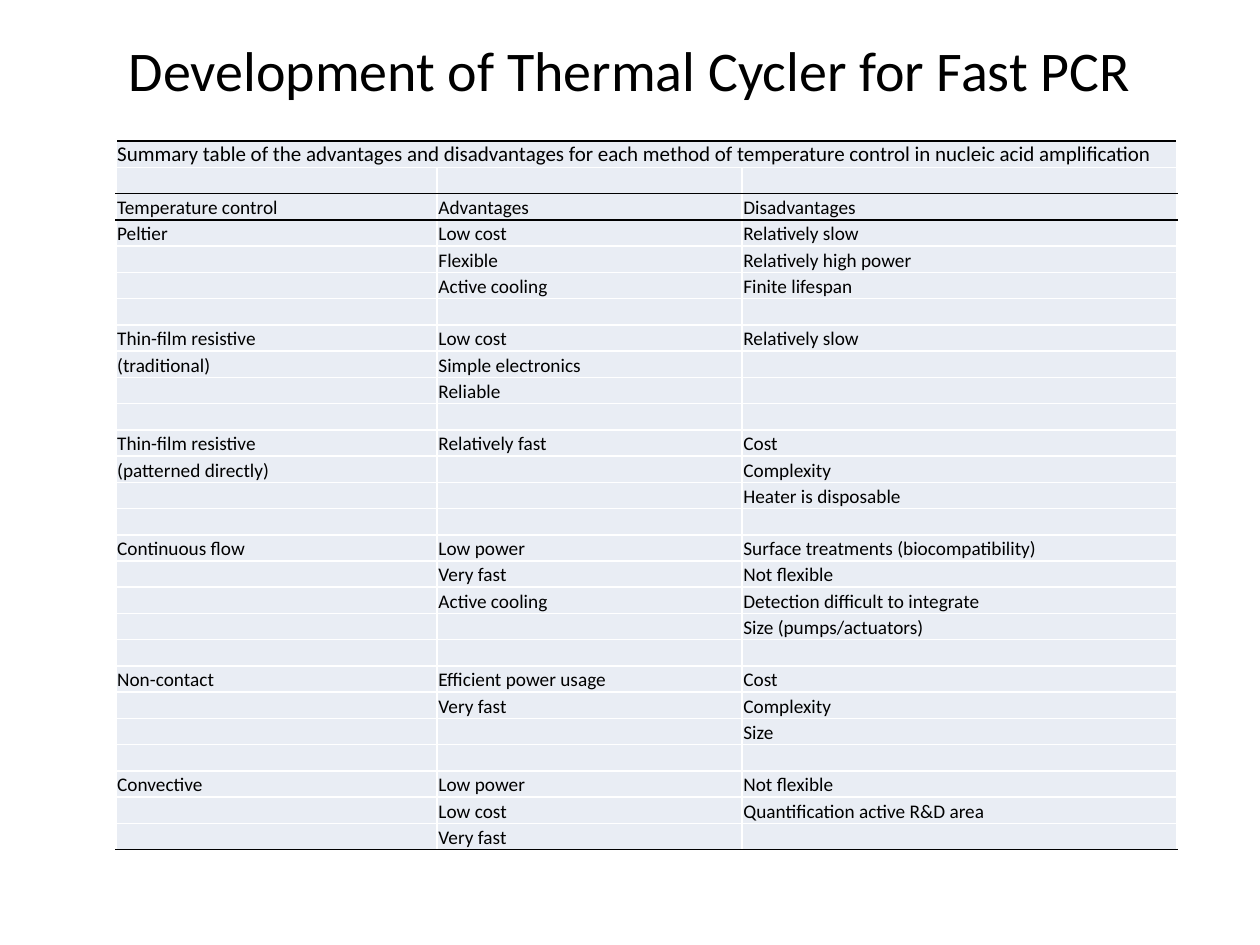
from lxml.etree import SubElement
from pptx import Presentation
from pptx.dml.color import RGBColor
from pptx.enum.text import MSO_ANCHOR, PP_ALIGN
from pptx.oxml.ns import qn
from pptx.util import Inches, Pt

COLORS = {"text": "000000", "rule": "000000", "grid": "FFFFFF", "cell": "E9EDF4"}
FONT = "Calibri"
TITLE = "Development of Thermal Cycler for Fast PCR"
CAPTION = ("Summary table of the advantages and disadvantages for each method "
           "of temperature control in nucleic acid amplification")
HEADINGS = ("Temperature control", "Advantages", "Disadvantages")
METHODS = [  # name lines, advantages, disadvantages
    (["Peltier"],
     ["Low cost", "Flexible", "Active cooling"],
     ["Relatively slow", "Relatively high power", "Finite lifespan"]),
    (["Thin-film resistive", "(traditional)"],
     ["Low cost", "Simple electronics", "Reliable"],
     ["Relatively slow"]),
    (["Thin-film resistive", "(patterned directly)"],
     ["Relatively fast"],
     ["Cost", "Complexity", "Heater is disposable"]),
    (["Continuous flow"],
     ["Low power", "Very fast", "Active cooling"],
     ["Surface treatments (biocompatibility)", "Not flexible",
      "Detection difficult to integrate", "Size (pumps/actuators)"]),
    (["Non-contact"],
     ["Efficient power usage", "Very fast"],
     ["Cost", "Complexity", "Size"]),
    (["Convective"],
     ["Low power", "Low cost", "Very fast"],
     ["Not flexible", "Quantification active R&D area"]),
]
COLUMN_WIDTHS = (2.55, 2.42, 3.45)
TABLE_LEFT, TABLE_TOP, TABLE_HEIGHT = 0.92, 1.12, 5.63
BLANK = ("", "", "")


def table_rows():
    """Spread each method over as many rows as its longest list, with a blank row between."""
    rows = [(CAPTION, "", ""), BLANK, HEADINGS]
    for index, method in enumerate(METHODS):
        if index:
            rows.append(BLANK)
        for line in range(max(map(len, method))):
            rows.append(tuple(part[line] if line < len(part) else "" for part in method))
    return rows


def write(frame, text, size, align=PP_ALIGN.LEFT):
    para = frame.paragraphs[0]
    para.alignment = align
    if not text:  # keeps an empty row as low as a filled one
        para._p.get_or_add_endParaRPr().set("sz", str(size * 100))
        return
    span = para.add_run()
    span.text = text
    span.font.size = Pt(size)
    span.font.name = FONT
    span.font.color.rgb = RGBColor.from_string(COLORS["text"])


def add_borders(cell, top, bottom):
    properties = cell._tc.get_or_add_tcPr()
    sides = {"L": "grid", "R": "grid", "T": top, "B": bottom}
    for side, color in sides.items():
        line = SubElement(properties, qn(f"a:ln{side}"), w=str(Pt(1)))
        fill = SubElement(line, qn("a:solidFill"))
        SubElement(fill, qn("a:srgbClr"), val=COLORS[color])


def add_summary_table(page):
    rows = table_rows()
    ruled_edges = {0, 2, 3, len(rows)}
    table = page.shapes.add_table(
        len(rows), len(COLUMN_WIDTHS), Inches(TABLE_LEFT), Inches(TABLE_TOP),
        Inches(sum(COLUMN_WIDTHS)), Inches(TABLE_HEIGHT)).table
    table.first_row = table.horz_banding = False
    for column, width in zip(table.columns, COLUMN_WIDTHS):
        column.width = Inches(width)
    for r, texts in enumerate(rows):
        table.rows[r].height = Inches(TABLE_HEIGHT / len(rows))
        top, bottom = ("rule" if edge in ruled_edges else "grid" for edge in (r, r + 1))
        for c, text in enumerate(texts):
            cell = table.cell(r, c)
            cell.margin_left = cell.margin_right = Inches(0.01)
            cell.margin_top = cell.margin_bottom = 0
            cell.vertical_anchor = MSO_ANCHOR.BOTTOM
            write(cell.text_frame, text, size=12 if r == 0 else 11)
            add_borders(cell, top, bottom)
            cell.fill.solid()
            cell.fill.fore_color.rgb = RGBColor.from_string(COLORS["cell"])
    table.cell(0, 0).merge(table.cell(0, len(COLUMN_WIDTHS) - 1))


def main():
    deck = Presentation()
    deck.slide_width, deck.slide_height = Inches(10), Inches(7.5)
    page = deck.slides.add_slide(deck.slide_layouts[5])
    title = page.shapes.title
    title.left, title.top = Inches(0.5), Inches(0.17)
    title.width, title.height = Inches(9), Inches(0.75)
    title.text_frame.vertical_anchor = MSO_ANCHOR.MIDDLE
    write(title.text_frame, TITLE, size=32, align=PP_ALIGN.CENTER)
    add_summary_table(page)
    deck.save("out.pptx")


if __name__ == "__main__":
    main()
